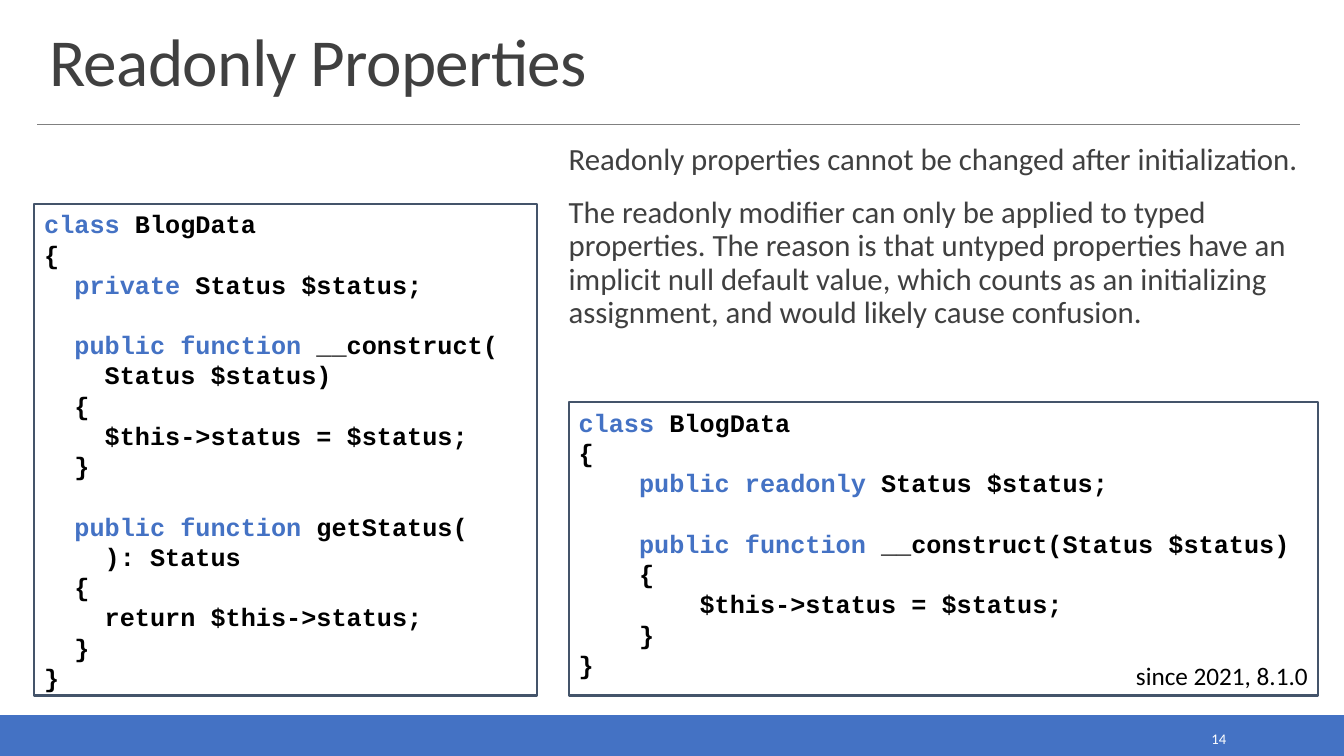
from pptx import Presentation
from pptx.dml.color import RGBColor
from pptx.enum.shapes import MSO_CONNECTOR as Connector, MSO_SHAPE as Shape
from pptx.enum.text import MSO_ANCHOR as Anchor, MSO_AUTO_SIZE as AutoSize, PP_ALIGN as Align
from pptx.oxml.ns import qn
from pptx.util import Inches, Pt
from lxml.etree import SubElement

BLUE, SLATE, GREY, INK = "4472C4", "44546A", "808080", "404040"
BLACK, WHITE = "000000", "FFFFFF"
KEYWORDS = {"class", "private", "public", "function", "readonly"}

GETTER_CLASS = """class BlogData
{
  private Status $status;
   
  public function __construct(
    Status $status)
  {
    $this->status = $status;
  }
    
  public function getStatus(
    ): Status
  {
    return $this->status;
  }
}"""

READONLY_CLASS = """class BlogData
{
    public readonly Status $status;
   
    public function __construct(Status $status)
    {
        $this->status = $status;
    }
}"""

RULES = [
    "Readonly properties cannot be changed after initialization.",
    "The readonly modifier can only be applied to typed properties. The reason is "
    "that untyped properties have an implicit null default value, which counts as an "
    "initializing assignment, and would likely cause confusion.",
]


def rgb(color):
    return RGBColor.from_string(color)


def format_run(run, size, color, font="Calibri", bold=False):
    run.font.size = Pt(size)
    run.font.name = font
    run.font.bold = bold
    run.font.color.rgb = rgb(color)


def place(shape, left, top, width, height):
    shape.left, shape.top = Inches(left), Inches(top)
    shape.width, shape.height = Inches(width), Inches(height)


def add_box(slide, left, top, width, height, fill, line, line_width):
    box = slide.shapes.add_shape(
        Shape.RECTANGLE, Inches(left), Inches(top), Inches(width), Inches(height))
    box.shadow.inherit = False
    if fill:
        box.fill.solid()
        box.fill.fore_color.rgb = rgb(fill)
    else:
        box.fill.background()
    box.line.color.rgb = rgb(line)
    box.line.width = Pt(line_width)
    return box


def add_rule(slide, left, right, y):
    rule = slide.shapes.add_connector(
        Connector.STRAIGHT, Inches(left), Inches(y), Inches(right), Inches(y))
    rule.line.color.rgb = rgb(GREY)
    rule.line.width = Pt(0.5)
    SubElement(rule._element.spPr, qn("a:effectLst"))


def add_label(slide, text, left, top, width, height, size, color, anchor):
    label = slide.shapes.add_textbox(
        Inches(left), Inches(top), Inches(width), Inches(height))
    frame = label.text_frame
    frame.word_wrap = True
    frame.vertical_anchor = anchor
    frame.text = text
    frame.paragraphs[0].alignment = Align.RIGHT
    format_run(frame.paragraphs[0].runs[0], size, color)


def split_code(line):
    """Return (text, is_keyword) pieces, joining neighbours of the same kind."""
    pieces = []
    for index, word in enumerate(line.split(" ")):
        text = word if index == 0 else " " + word
        keyword = word in KEYWORDS
        if pieces and pieces[-1][1] == keyword:
            pieces[-1] = (pieces[-1][0] + text, keyword)
        else:
            pieces.append((text, keyword))
    return pieces


def add_code(slide, code, left, top, width, height):
    frame = add_box(slide, left, top, width, height, None, SLATE, 1.5).text_frame
    frame.word_wrap = True
    frame.vertical_anchor = Anchor.TOP
    for index, line in enumerate(code.split("\n")):
        paragraph = frame.paragraphs[0] if index == 0 else frame.add_paragraph()
        paragraph.alignment = Align.LEFT
        for text, keyword in split_code(line):
            run = paragraph.add_run()
            run.text = text
            format_run(run, 18, BLUE if keyword else BLACK, "Courier New", True)


def fill_title(title, text):
    place(title, 0.39, 0.2, 12.52, 0.84)
    frame = title.text_frame
    frame.text = text
    frame.auto_size = AutoSize.NONE
    frame.vertical_anchor = Anchor.BOTTOM
    heading = frame.paragraphs[0]
    heading.alignment = Align.LEFT
    heading.line_spacing = 0.85
    format_run(heading.runs[0], 48, INK)
    heading.runs[0].font._element.set("spc", "-50")


def fill_body(body, texts):
    place(body, 5.64, 1.39, 7.24, 2.31)
    frame = body.text_frame
    frame.text = "\n".join(texts)
    frame.auto_size = AutoSize.NONE
    frame.margin_left = frame.margin_right = 0
    frame.margin_top = frame.margin_bottom = Inches(0.04)
    for index, paragraph in enumerate(frame.paragraphs):
        paragraph.line_spacing = 0.9
        paragraph.space_before = Pt(12 if index else 0)
        paragraph.space_after = Pt(2)
        properties = paragraph._p.get_or_add_pPr()
        properties.set("marL", "0")
        properties.set("indent", "0")
        SubElement(properties, qn("a:buNone"))
        format_run(paragraph.runs[0], 22, INK)


def main():
    deck = Presentation()
    deck.slide_width, deck.slide_height = Inches(13.33), Inches(7.5)
    slide = deck.slides.add_slide(deck.slide_layouts[1])

    # Footer band and title rule
    add_box(slide, 0, 7.1, 13.33, 0.4, BLUE, BLUE, 1.25)
    add_rule(slide, 0.37, 12.89, 1.23)

    # Title and explanation
    fill_title(slide.shapes.title, "Readonly Properties")
    fill_body(slide.placeholders[1], RULES)

    # Slide number
    add_label(slide, "14", 10.83, 7.19, 1.43, 0.28, 10.5, WHITE, Anchor.MIDDLE)

    # Code before and after readonly
    add_code(slide, READONLY_CLASS, 5.64, 3.99, 7.43, 2.91)
    add_label(slide, "since 2021, 8.1.0", 10.29, 6.5, 2.78, 0.4, 18, BLACK, Anchor.TOP)
    add_code(slide, GETTER_CLASS, 0.34, 2.02, 4.99, 4.88)

    deck.save("out.pptx")


if __name__ == "__main__":
    main()
